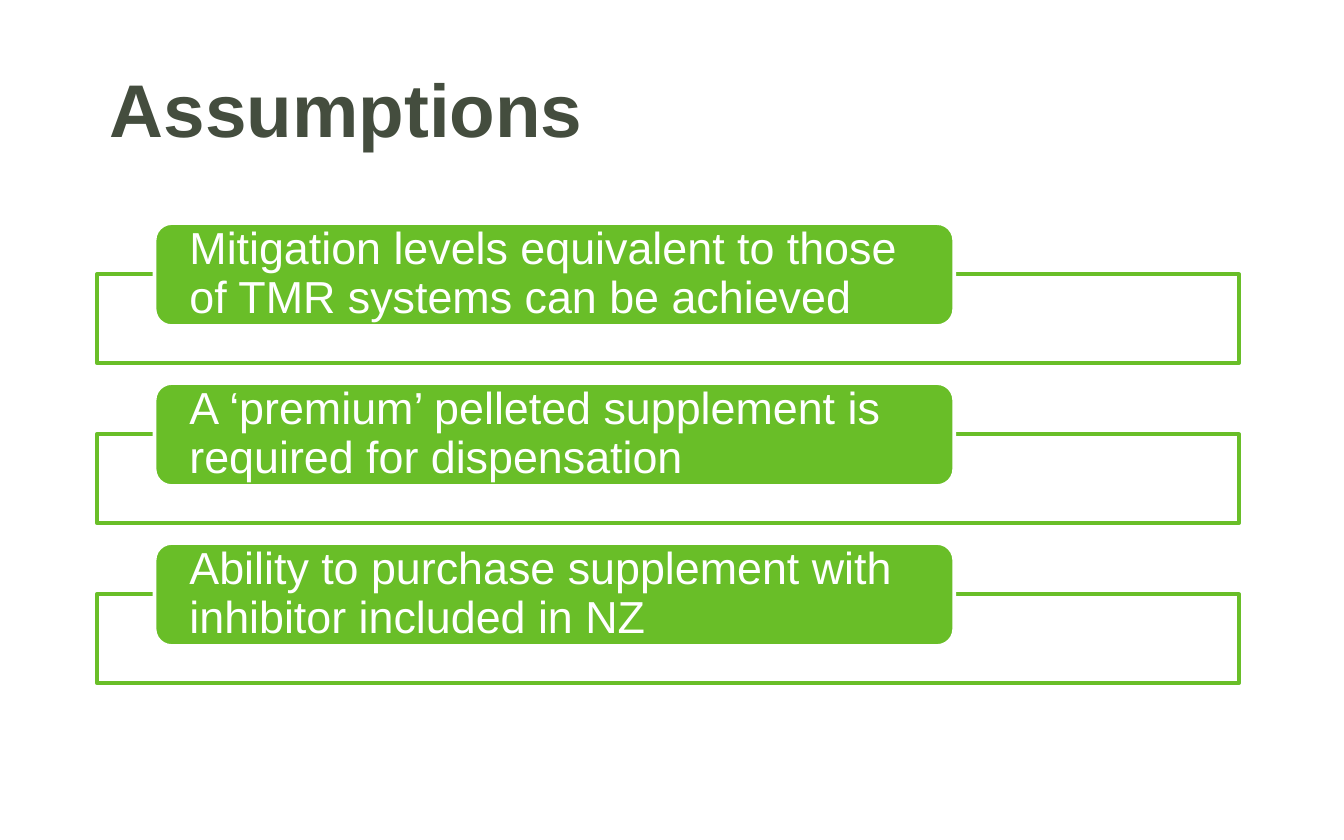
"""Build the Assumptions slide: a title over three labelled frames."""

from dataclasses import dataclass

import pptx
import pptx.dml.color
import pptx.enum.shapes
import pptx.enum.text
import pptx.util

Pt = pptx.util.Pt
RGBColor = pptx.dml.color.RGBColor
Shapes = pptx.enum.shapes.MSO_SHAPE
Anchor = pptx.enum.text.MSO_ANCHOR
Align = pptx.enum.text.PP_ALIGN

GREEN = RGBColor(0x69, 0xBE, 0x28)
WHITE = RGBColor(0xFF, 0xFF, 0xFF)
DARK_OLIVE = RGBColor(0x44, 0x4D, 0x3E)

FONT_NAME = "Arial"
MARGIN_LEFT = 51.84
CONTENT_WIDTH = 612
FIRST_LABEL_TOP = 119.5
ROW_PITCH = 85.7

ASSUMPTIONS = [
    "Mitigation levels equivalent to those of TMR systems can be achieved",
    "A ‘premium’ pelleted supplement is required for dispensation",
    "Ability to purchase supplement with inhibitor included in NZ",
]


@dataclass(frozen=True)
class Area:
    left: float
    top: float
    width: float
    height: float

    def lengths(self) -> tuple:
        return Pt(self.left), Pt(self.top), Pt(self.width), Pt(self.height)


def write_text(box, text: str, size: float, color: RGBColor, bold: bool = False) -> None:
    frame = box.text_frame
    frame.text = text
    frame.word_wrap = True
    frame.vertical_anchor = Anchor.MIDDLE
    para = frame.paragraphs[0]
    para.alignment = Align.LEFT
    for span in para.runs:
        span.font.name = FONT_NAME
        span.font.size = Pt(size)
        span.font.bold = bold
        span.font.color.rgb = color


def draw_box(page, kind, area: Area, fill: RGBColor, line: RGBColor):
    box = page.shapes.add_shape(kind, *area.lengths())
    box.shadow.inherit = False
    box.fill.solid()
    box.fill.fore_color.rgb = fill
    box.line.color.rgb = line
    box.line.width = Pt(2)
    return box


def draw_assumption(page, text: str, top: float) -> None:
    frame_area = Area(MARGIN_LEFT, top + 27.5, CONTENT_WIDTH, 47.5)
    draw_box(page, Shapes.RECTANGLE, frame_area, WHITE, GREEN)
    label_area = Area(82.8, top, 428.4, 55.2)
    label = draw_box(page, Shapes.ROUNDED_RECTANGLE, label_area, GREEN, WHITE)
    write_text(label, text, 24, WHITE)
    frame = label.text_frame
    frame.margin_left = frame.margin_right = Pt(16)
    frame.margin_top = frame.margin_bottom = Pt(0)
    frame.paragraphs[0].line_spacing = 0.9


def main() -> None:
    deck = pptx.Presentation()
    deck.slide_width, deck.slide_height = Pt(720), Pt(450)
    page = deck.slides.add_slide(deck.slide_layouts[6])
    title_area = Area(MARGIN_LEFT, 35.3, CONTENT_WIDTH, 44.6)
    title = page.shapes.add_textbox(*title_area.lengths())
    write_text(title, "Assumptions", 40, DARK_OLIVE, bold=True)
    for row, text in enumerate(ASSUMPTIONS):
        draw_assumption(page, text, FIRST_LABEL_TOP + row * ROW_PITCH)
    deck.save("out.pptx")


if __name__ == "__main__":
    main()
